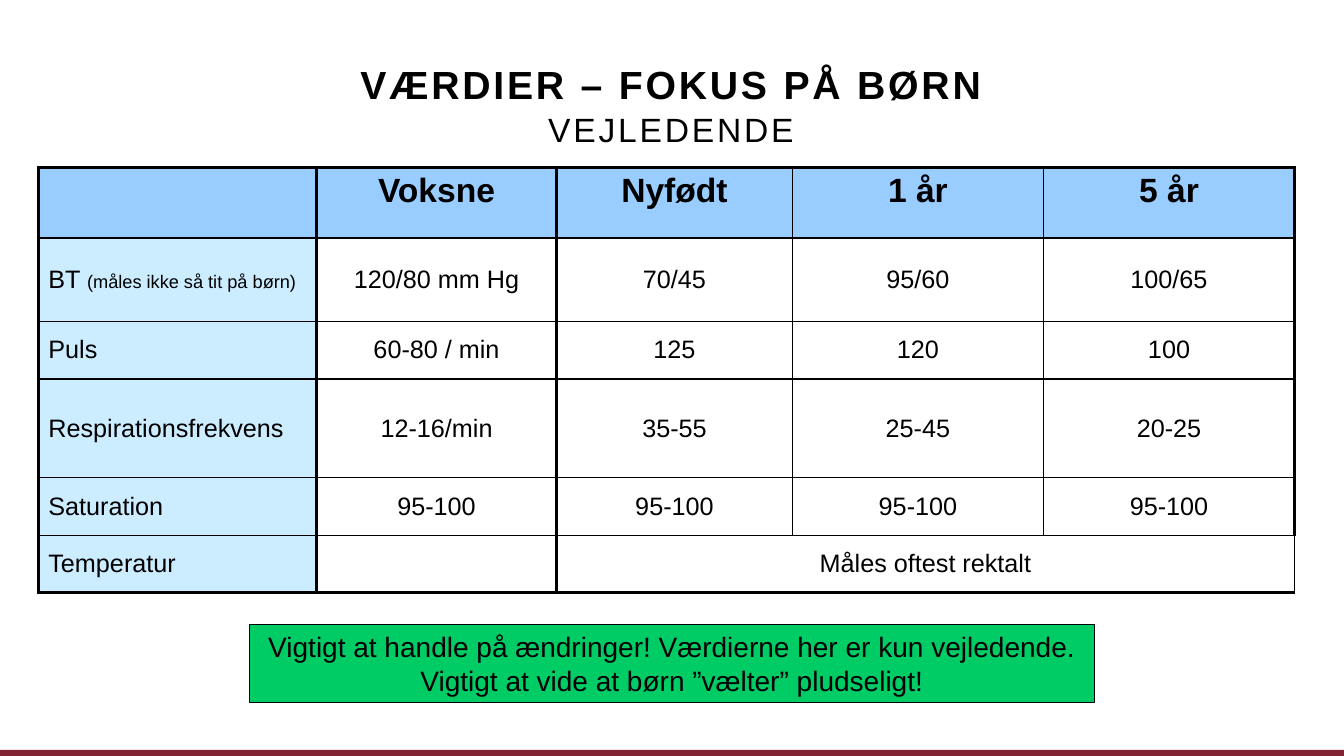
from lxml.etree import SubElement
from pptx import Presentation
from pptx.dml.color import RGBColor
from pptx.enum.shapes import MSO_SHAPE
from pptx.enum.text import MSO_ANCHOR, PP_ALIGN
from pptx.oxml.ns import qn
from pptx.util import Inches, Pt

FONT = "Arial"
BLACK, BLUE, PALE, GREEN, MAROON = "000000", "99CCFF", "CCECFF", "00CC66", "822433"
THICK, THIN = 2.25, 1

COL_WIDTHS = [2.76, 2.38, 2.34, 2.49, 2.49]
ROW_HEIGHTS = [0.7, 0.83, 0.57, 0.98, 0.57, 0.57]
COL_LINES = [THICK, THICK, THICK, THIN, THIN, THICK]
ROW_LINES = [THICK, THICK, THIN, THIN, THIN, THIN, THICK]
ROWS = [
    ["", "Voksne", "Nyfødt", "1 år", "5 år"],
    ["BT ", "120/80 mm Hg", "70/45", "95/60", "100/65"],
    ["Puls", "60-80 / min", "125", "120", "100"],
    ["Respirationsfrekvens", "12-16/min", "35-55", "25-45", "20-25"],
    ["Saturation", "95-100", "95-100", "95-100", "95-100"],
    ["Temperatur", "", "Måles oftest rektalt", "", ""],
]
BT_NOTE = "(måles ikke så tit på børn)"


def rgb(color):
    return RGBColor.from_string(color)


def set_font(font, size, bold=False):
    font.name, font.size, font.bold = FONT, Pt(size), bold
    font.color.rgb = rgb(BLACK)


def add_title(slide, lines):
    """Add centred, letter-spaced lines given as (text, size, bold)."""
    tf = slide.shapes.add_textbox(Inches(0.83), Inches(0.39), Inches(11.65), Inches(1.1)).text_frame
    tf.word_wrap = True
    tf.vertical_anchor = MSO_ANCHOR.BOTTOM
    tf.margin_left = tf.margin_right = tf.margin_top = tf.margin_bottom = 0
    for i, (text, size, bold) in enumerate(lines):
        p = tf.add_paragraph() if i else tf.paragraphs[0]
        p.alignment = PP_ALIGN.CENTER
        p.line_spacing = 0.9
        p.space_before = Pt(4 if i else 0)
        r = p.add_run()
        r.text = text
        set_font(r.font, size, bold)
        r._r.get_or_add_rPr().set("spc", "200")


def add_box(slide, left, top, width, height, fill, line=None):
    sp = slide.shapes.add_shape(MSO_SHAPE.RECTANGLE, Inches(left), Inches(top),
                                Inches(width), Inches(height))
    sp.shadow.inherit = False
    sp.fill.solid()
    sp.fill.fore_color.rgb = rgb(fill)
    if line:
        sp.line.color.rgb = rgb(line)
        sp.line.width = Pt(0.75)
    else:
        sp.line.fill.background()
    return sp


def fill_cell(cell, color):
    if color:
        cell.fill.solid()
        cell.fill.fore_color.rgb = rgb(color)
    else:
        cell.fill.background()


def set_borders(cell, widths):
    """Draw the borders; widths are left, right, top, bottom in points."""
    tcPr = cell._tc.get_or_add_tcPr()
    for i, (side, width) in enumerate(zip("LRTB", widths)):
        ln = SubElement(tcPr, qn(f"a:ln{side}"), w=str(Pt(width)))
        SubElement(SubElement(ln, qn("a:solidFill")), qn("a:srgbClr"), val=BLACK)
        tcPr.remove(ln)
        tcPr.insert(i, ln)


def add_values_table(slide):
    table = slide.shapes.add_table(len(ROWS), len(COL_WIDTHS), Inches(0.38), Inches(1.66),
                                   Inches(sum(COL_WIDTHS)), Inches(sum(ROW_HEIGHTS))).table
    table.first_row = table.horz_banding = False
    for col, width in zip(table.columns, COL_WIDTHS):
        col.width = Inches(width)
    for row, height in zip(table.rows, ROW_HEIGHTS):
        row.height = Inches(height)
    for i, values in enumerate(ROWS):
        header = i == 0
        for j, text in enumerate(values):
            cell = table.cell(i, j)
            fill_cell(cell, BLUE if header else PALE if j == 0 else None)
            set_borders(cell, COL_LINES[j:j + 2] + ROW_LINES[i:i + 2])
            cell.vertical_anchor = MSO_ANCHOR.TOP if header else MSO_ANCHOR.MIDDLE
            p = cell.text_frame.paragraphs[0]
            p.alignment = PP_ALIGN.CENTER if j else PP_ALIGN.LEFT
            set_font(p.font, 24 if header else 18, header)
            if text:
                p.add_run().text = text
    note = table.cell(1, 0).text_frame.paragraphs[0].add_run()
    note.text = BT_NOTE
    note.font.size = Pt(13)
    table.cell(5, 2).merge(table.cell(5, 4))


def add_warning(slide, lines):
    tf = add_box(slide, 2.47, 6.2, 8.39, 0.77, GREEN, BLACK).text_frame
    tf.word_wrap = True
    tf.vertical_anchor = MSO_ANCHOR.TOP
    for i, text in enumerate(lines):
        p = tf.add_paragraph() if i else tf.paragraphs[0]
        p.text = text
        p.alignment = PP_ALIGN.CENTER
        set_font(p.font, 20)


def main():
    prs = Presentation()
    prs.slide_width, prs.slide_height = Inches(13.33), Inches(7.5)
    slide = prs.slides.add_slide(prs.slide_layouts[6])
    add_box(slide, 0, 7.44, 13.33, 0.06, MAROON)
    add_title(slide, [("VÆRDIER – FOKUS PÅ BØRN", 28, True), ("VEJLEDENDE", 24, False)])
    add_values_table(slide)
    add_warning(slide, ["Vigtigt at handle på ændringer! Værdierne her er kun vejledende.",
                        "Vigtigt at vide at børn ”vælter” pludseligt!"])
    prs.save("out.pptx")


if __name__ == "__main__":
    main()
